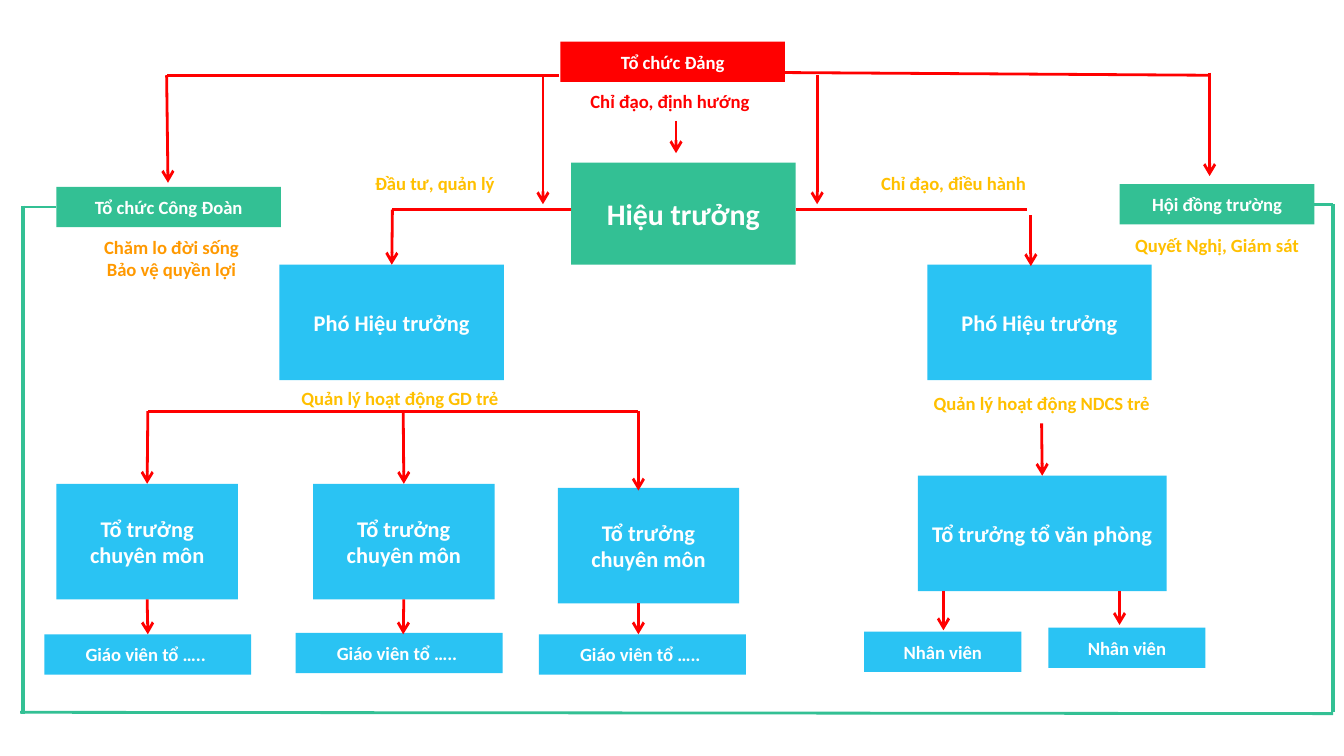
from lxml import etree
from pptx import Presentation
from pptx.dml.color import RGBColor
from pptx.enum.shapes import MSO_CONNECTOR, MSO_SHAPE
from pptx.enum.text import MSO_ANCHOR, PP_ALIGN
from pptx.oxml.ns import qn
from pptx.util import Inches, Pt

STRAIGHT = MSO_CONNECTOR.STRAIGHT
RECTANGLE = MSO_SHAPE.RECTANGLE
MIDDLE = MSO_ANCHOR.MIDDLE
CENTER = PP_ALIGN.CENTER
TOP, LEFT, BOTTOM, RIGHT = range(4)

FONT = "Calibri"
WHITE, RED, GREEN, BLUE = "FFFFFF", "FF0000", "33C094", "2AC3F3"
GOLD, ORANGE = "FFC000", "FF9900"

ROLE_STYLES = {
    "party": (1.67, 0.3, RED, 10),
    "union": (1.67, 0.3, GREEN, 10),
    "council": (1.45, 0.3, GREEN, 10),
    "principal": (1.67, 0.76, GREEN, 16),
    "deputy": (1.67, 0.86, BLUE, 12),
    "leader": (1.35, 0.86, BLUE, 12),
    "office": (1.85, 0.86, BLUE, 12),
    "teacher": (1.54, 0.3, BLUE, 10),
    "staff": (1.17, 0.3, BLUE, 10),
}
ROLES = [
    ("party", "Tổ chức Đảng", [(4.17, 0.31)]),
    ("union", "Tổ chức Công Đoàn", [(0.42, 1.39)]),
    ("council", "Hội đồng trường", [(8.33, 1.37)]),
    ("principal", "Hiệu trưởng", [(4.25, 1.21)]),
    ("deputy", "Phó Hiệu trưởng", [(2.08, 1.97), (6.9, 1.97)]),
    ("leader", "Tổ trưởng chuyên môn", [(0.42, 3.6), (2.33, 3.6), (4.15, 3.63)]),
    ("office", "Tổ trưởng tổ văn phòng", [(6.83, 3.54)]),
    ("teacher", "Giáo viên tổ ….. ", [(0.33, 4.72), (2.2, 4.71), (4.01, 4.72)]),
    ("staff", "Nhân viên", [(6.43, 4.7), (7.8, 4.67)]),
]
DUTIES = [
    ("Chỉ đạo, định hướng", 4, 0.6, 1.97, RED),
    ("Đầu tư, quản lý", 2.25, 1.21, 1.97, GOLD),
    ("Chỉ đạo, điều hành", 6.11, 1.21, 1.97, GOLD),
    ("Chăm lo đời sống\nBảo vệ quyền lợi", 0.29, 1.77, 1.97, ORANGE),
    ("Quyết Nghị, Giám sát", 8.07, 1.67, 1.97, GOLD),
    ("Quản lý hoạt động GD trẻ", 1.92, 2.81, 2.11, GOLD),
    ("Quản lý hoạt động NDCS trẻ", 6.5, 2.85, 2.5, GOLD),
]
BRANCHES = [
    ((4.16, 0.56), (1.24, 0.56)),
    ((9, 0.56), (5.83, 0.54)),
    ((4.25, 1.56), (2.92, 1.56)),
    ((7.64, 1.56), (5.92, 1.56)),
    ((4.75, 3.06), (1.1, 3.06)),
]
ARROWS = [
    ((1.24, 0.56), (1.25, 1.36)),
    ((9, 0.54), (9, 1.31)),
    ((5.03, 0.9), (5.03, 1.14)),
    ((4.04, 0.56), (4.04, 1.52)),
    ((6.08, 0.56), (6.08, 1.52)),
    ((2.92, 1.56), ("deputy", 0, TOP)),
    ((7.67, 1.6), (7.67, 1.98)),
    ((1.1, 3.06), ("leader", 0, TOP)),
    ((3, 3.06), ("leader", 1, TOP)),
    ((4.75, 3.06), (4.75, 3.65)),
    (("leader", 0, BOTTOM), ("teacher", 0, TOP)),
    (("leader", 1, BOTTOM), (3, 4.72)),
    ((4.75, 4.49), (4.75, 4.72)),
    ((7.75, 3.15), ("office", 0, TOP)),
    ((7.02, 4.4), (7.02, 4.69)),
    ((8.33, 4.4), (8.33, 4.65)),
]
FRAME = [
    ((9.92, 1.52), ("council", 0, RIGHT), 1.5),
    ((0.17, 1.54), ("union", 0, LEFT), 1.5),
    ((0.17, 1.53), (0.17, 5.31), 2.25),
    ((9.92, 5.31), (0.15, 5.3), 1.5),
    ((9.92, 1.52), (9.92, 5.3), 2.25),
]


def rgb(color):
    """Turn a hex string into a colour."""
    return RGBColor.from_string(color)


def write(shape, text, size=10, color=WHITE):
    """Fill a shape with bold, centred text."""
    frame = shape.text_frame
    frame.word_wrap = True
    frame.vertical_anchor = MIDDLE
    frame.margin_left = frame.margin_right = Inches(0.1)
    frame.margin_top = frame.margin_bottom = Inches(0.1)
    frame.text = text
    for paragraph in frame.paragraphs:
        paragraph.alignment = CENTER
        font = paragraph.runs[0].font
        font.name, font.size, font.bold = FONT, Pt(size), True
        font.color.rgb = rgb(color)


def add_role(slide, kind, text, left, top):
    """Add the box of one role."""
    width, height, fill, size = ROLE_STYLES[kind]
    box = slide.shapes.add_shape(
        RECTANGLE, Inches(left), Inches(top), Inches(width), Inches(height))
    box.shadow.inherit = False
    box.fill.solid()
    box.fill.fore_color.rgb = rgb(fill)
    box.line.fill.background()
    write(box, text, size=size)
    return box


def add_link(slide, boxes, start, end, color=RED, weight=1.5, arrow=False):
    """Draw a line between points or the sides of role boxes."""
    points = [p if len(p) == 2 else (0, 0) for p in (start, end)]
    link = slide.shapes.add_connector(
        STRAIGHT, *(Inches(value) for point in points for value in point))
    for place, join in ((start, link.begin_connect), (end, link.end_connect)):
        if len(place) == 3:
            kind, index, side = place
            join(boxes[kind][index], side)
    link.line.color.rgb = rgb(color)
    link.line.width = Pt(weight)
    properties = link.element.spPr
    if arrow:
        etree.SubElement(properties.find(qn("a:ln")), qn("a:tailEnd"), type="arrow")
    etree.SubElement(properties, qn("a:effectLst"))


def main():
    """Build the school organisation chart."""
    deck = Presentation()
    deck.slide_width = Inches(10)
    deck.slide_height = deck.slide_width * 9 // 16
    slide = deck.slides.add_slide(deck.slide_layouts[6])
    boxes = {
        kind: [add_role(slide, kind, text, *place) for place in places]
        for kind, text, places in ROLES
    }
    for text, left, top, width, color in DUTIES:
        label = slide.shapes.add_textbox(
            Inches(left), Inches(top), Inches(width), Inches(0.3))
        write(label, text, color=color)
    for start, end in BRANCHES:
        add_link(slide, boxes, start, end)
    for start, end in ARROWS:
        add_link(slide, boxes, start, end, arrow=True)
    for start, end, weight in FRAME:
        add_link(slide, boxes, start, end, color=GREEN, weight=weight)
    deck.save("out.pptx")


if __name__ == "__main__":
    main()
